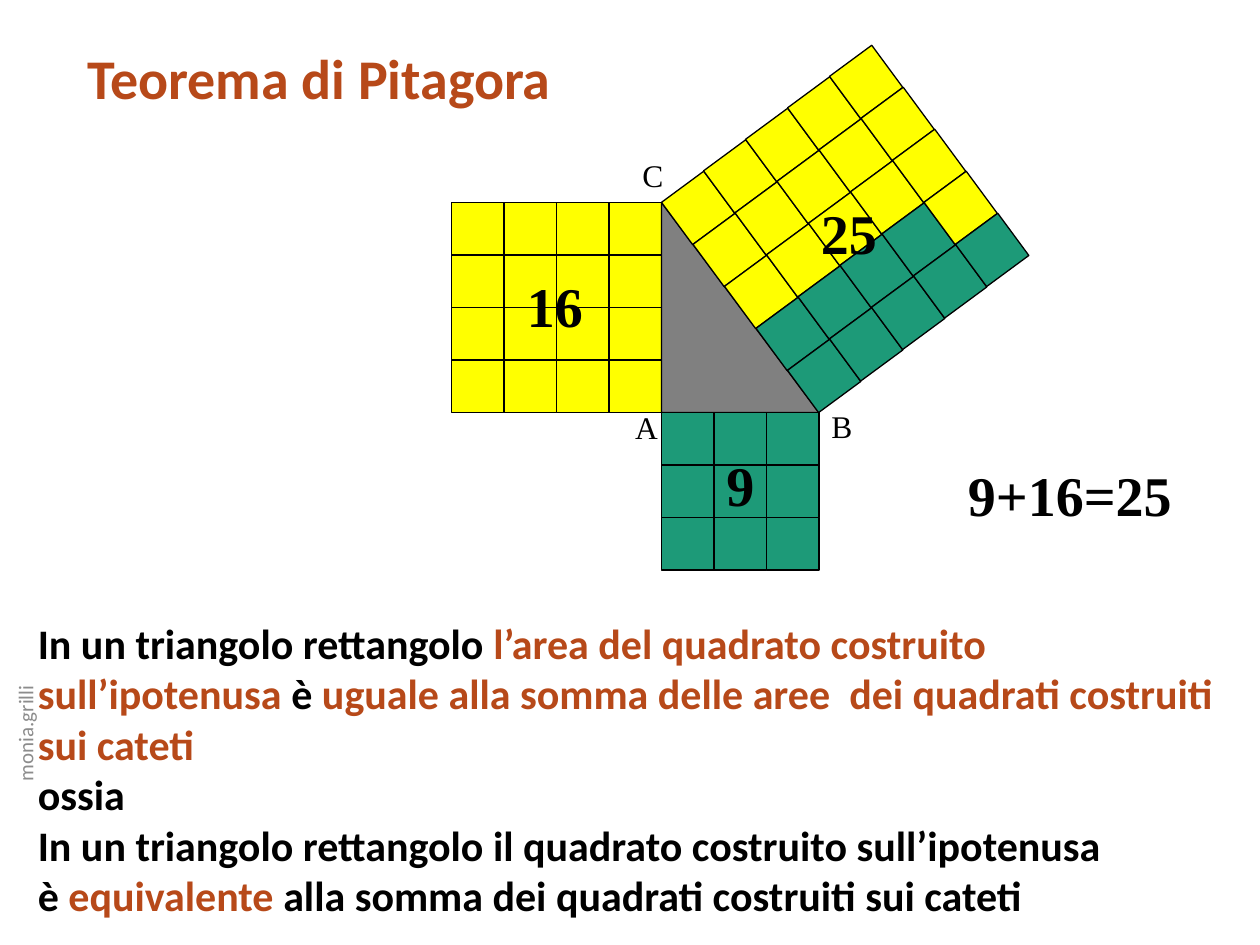
"""Build the slide on the Pythagorean theorem."""
import dataclasses
import typing

import pptx
import pptx.dml.color
import pptx.enum.shapes
import pptx.enum.text
import pptx.oxml.ns
import pptx.util
from lxml import etree

COLS = 24
INK = {"black": "000000", "rust": "B74919", "yellow": "FFFF00",
       "green": "1D9A78", "gray": "808080", "pale": "8C8C8C"}
KINDS = pptx.enum.shapes.MSO_SHAPE
ALIGN = pptx.enum.text.PP_ALIGN
ANCHOR = pptx.enum.text.MSO_ANCHOR
SIZE = pptx.util.Inches(10), pptx.util.Inches(7.5)
CELL = SIZE[0] / COLS
LEFT, TOP, LONG, SHORT = 8.6, 3.86, 4, 3
HYP = 5
COS, SIN = LONG / HYP, SHORT / HYP
APEX = LEFT + LONG
BASE = TOP + LONG
TILT = 323.6

BIG = {"name": "Times New Roman", "size": pptx.util.Pt(32), "bold": True}
MARK = {"name": "Times New Roman", "size": pptx.util.Pt(18), "bold": False}
HEAD = {"name": "Calibri", "size": pptx.util.Pt(32), "bold": True}
BODY = {"name": "Calibri", "size": pptx.util.Pt(24), "bold": True}
FOOT = {"name": "Calibri", "size": pptx.util.Pt(12), "bold": False}


class Box(typing.NamedTuple):
    x: float
    y: float
    w: float
    h: float


@dataclasses.dataclass
class Label:
    text: str
    box: Box
    font: dict


LABELS = [
    Label("9", Box(13.6, 8.47, 1, 1.5), BIG),
    Label("16", Box(9.8, 5.06, 1.56, 1.5), BIG),
    Label("25", Box(15.4, 3.67, 1.56, 1.5), BIG),
    Label("9+16=25", Box(18.2, 8.66, 4.37, 1.5), BIG),
    Label("A", Box(11.86, 7.66, 0.91, 0.96), MARK),
    Label("B", Box(15.6, 7.63, 0.89, 0.96), MARK),
    Label("C", Box(12, 2.86, 0.89, 0.96), MARK),
]

LINES = [
    [("In un triangolo rettangolo ", "black"),
     ("l’area del quadrato costruito sull’ipotenusa ", "rust"),
     ("è ", "black"),
     ("uguale alla somma delle aree  dei quadrati costruiti sui cateti", "rust")],
    [("ossia", "black")],
    [("In un triangolo rettangolo il quadrato costruito sull’ipotenusa", "black")],
    [("è ", "black"), ("equivalente", "rust"),
     (" alla somma dei quadrati costruiti sui cateti", "black")],
]


def tint(name: str) -> pptx.dml.color.RGBColor:
    return pptx.dml.color.RGBColor.from_string(INK[name])


def span(box: Box) -> list[int]:
    return [round(part * CELL) for part in box]


def place(shape, box: Box) -> None:
    for name, part in zip(("left", "top", "width", "height"), span(box)):
        setattr(shape, name, part)


def draw(slide, kind, box: Box, ink: str, turn: float = 0) -> None:
    shape = slide.shapes.add_shape(kind, *span(box))
    shape.shadow.inherit = False
    shape.rotation = turn
    shape.fill.solid()
    shape.fill.fore_color.rgb = tint(ink)
    shape.line.color.rgb = tint("black")
    shape.line.width = pptx.util.Pt(0.75)


def square(slide, x: float, y: float, side: int, ink: str) -> None:
    for row in range(side):
        for col in range(side):
            draw(slide, KINDS.RECTANGLE, Box(x + col, y + row, 1, 1), ink)


def slant(slide) -> None:
    for row in range(HYP):
        for col in range(HYP):
            along, down = col + 0.5, row + 0.5
            x = APEX + along * COS + down * SIN - 0.5
            y = TOP - along * SIN + down * COS - 0.5
            ink = "green" if row * HYP + col >= 15 and (row, col) != (3, 4) else "yellow"
            draw(slide, KINDS.RECTANGLE, Box(x, y, 1, 1), ink, TILT)


def write(shape, lines: list, font: dict, form: dict, align=ALIGN.LEFT) -> None:
    frame = shape.text_frame
    form = {"auto_size": pptx.enum.text.MSO_AUTO_SIZE.NONE, **form}
    for name, value in form.items():
        setattr(frame, name, value)
    for i, line in enumerate(lines):
        para = frame.add_paragraph() if i else frame.paragraphs[0]
        para.alignment = align
        para.space_before = pptx.util.Pt(0)
        for text, ink in line:
            run = para.add_run()
            run.text = text
            for name, value in font.items():
                setattr(run.font, name, value)
            run.font.color.rgb = tint(ink)


def plain(shape) -> None:
    for para in shape.text_frame.paragraphs:
        props = para._p.get_or_add_pPr()
        props.set("marL", "0")
        props.set("indent", "0")
        etree.SubElement(props, pptx.oxml.ns.qn("a:buNone"))


def main() -> None:
    deck = pptx.Presentation()
    deck.slide_width, deck.slide_height = SIZE
    slide = deck.slides.add_slide(deck.slide_layouts[1])
    top = {"word_wrap": False, "vertical_anchor": ANCHOR.TOP}
    wrap = {**top, "word_wrap": True}

    title, body = slide.placeholders
    place(title, Box(1.42, 0.7, 9.41, 1.54))
    write(title, [[("Teorema di Pitagora", "rust")]], HEAD, top)
    place(body, Box(0.48, 11.64, 23.06, 6.05))
    write(body, LINES, BODY, wrap)
    plain(body)

    square(slide, LEFT, TOP, LONG, "yellow")
    draw(slide, KINDS.RIGHT_TRIANGLE, Box(APEX, TOP, SHORT, LONG), "gray")
    square(slide, APEX, BASE, SHORT, "green")
    slant(slide)

    for label in LABELS:
        text = slide.shapes.add_textbox(*span(label.box))
        write(text, [[(label.text, "black")]], label.font, top)

    foot = slide.shapes.add_textbox(*span(Box(-3.58, 13.49, 8.11, 0.96)))
    foot.rotation = 270
    write(foot, [[("monia.grilli", "pale")]], FOOT,
          {**wrap, "vertical_anchor": ANCHOR.MIDDLE}, ALIGN.CENTER)
    deck.save("out.pptx")


if __name__ == "__main__":
    main()
